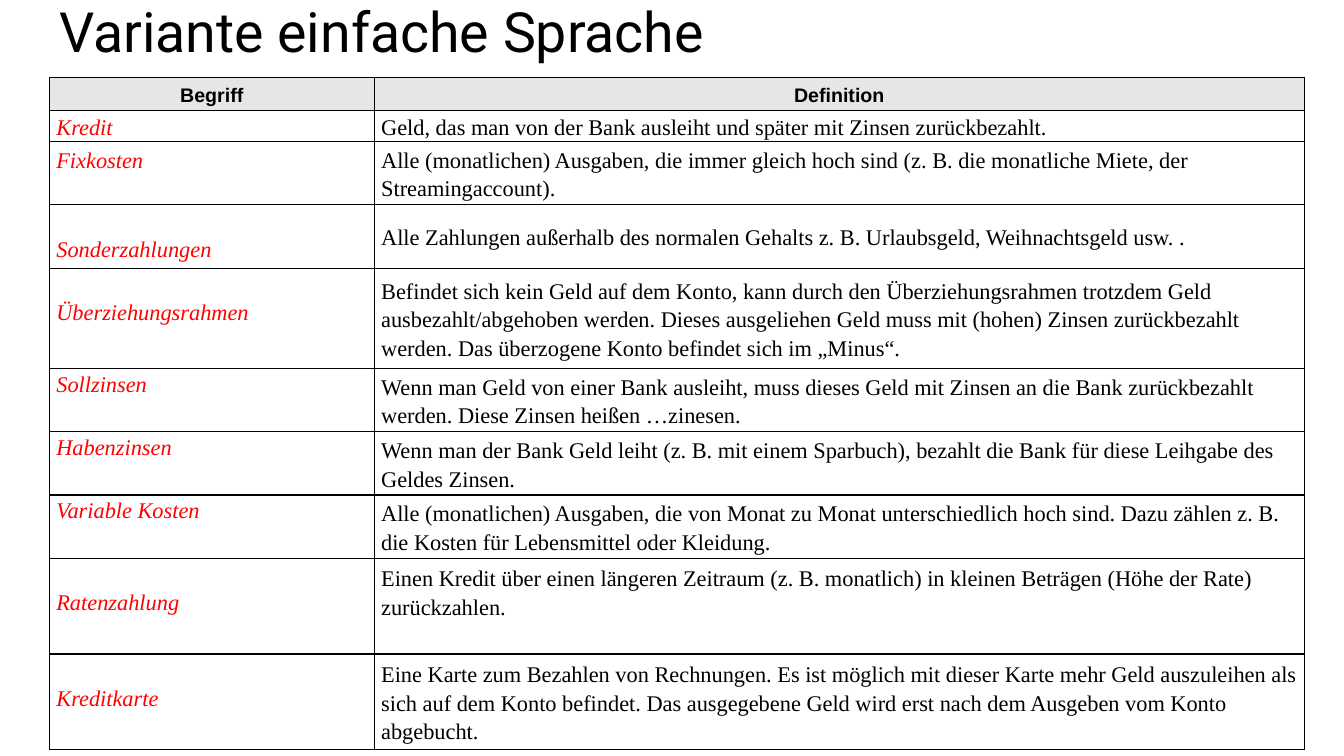
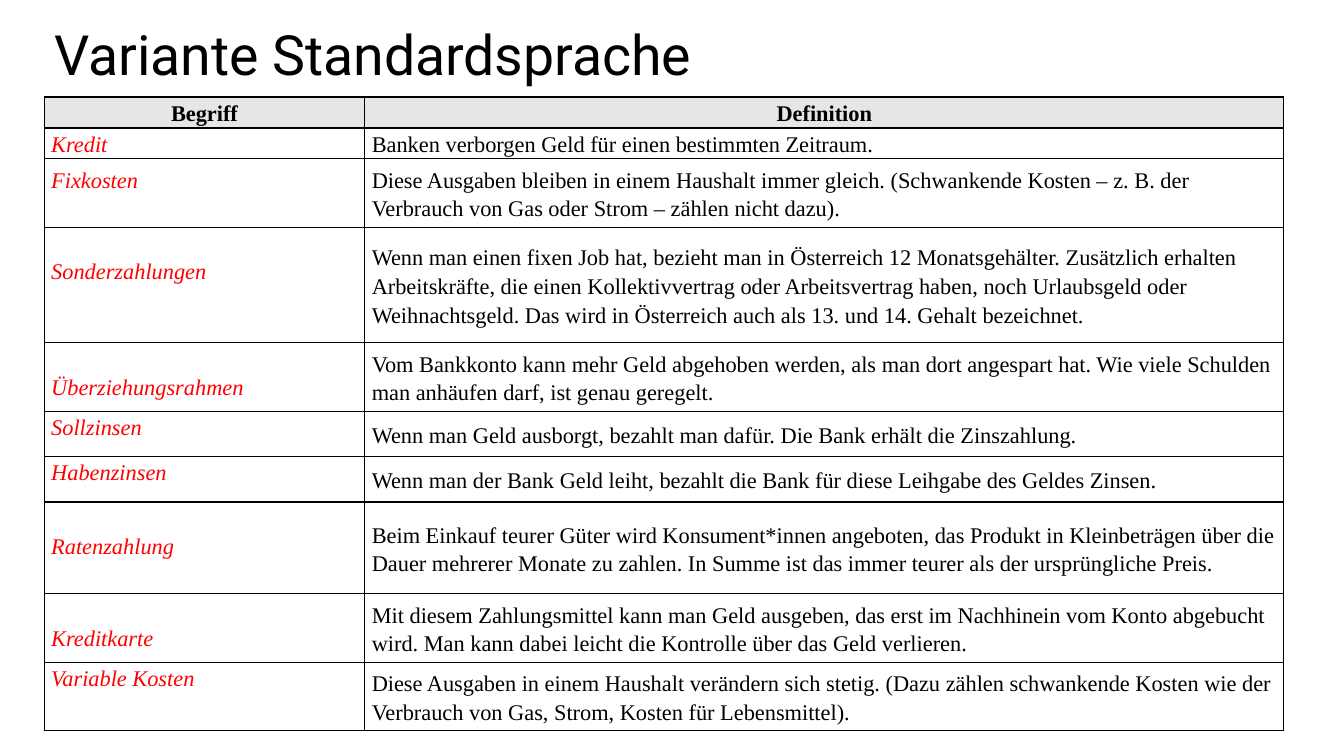
"""Build two vocabulary slides about money terms, each a title above a two-column table."""
from lxml import etree
from pptx import Presentation
from pptx.dml.color import RGBColor
from pptx.enum.text import MSO_ANCHOR, PP_ALIGN
from pptx.oxml.ns import qn
from pptx.util import Pt

MIDDLE, TOP = MSO_ANCHOR.MIDDLE, MSO_ANCHOR.TOP
LEFT, CENTER = PP_ALIGN.LEFT, PP_ALIGN.CENTER

THEME = {
    "black": RGBColor(0, 0, 0),
    "red": RGBColor(255, 0, 0),
    "white": RGBColor(255, 255, 255),
    "gray": RGBColor(0xE7, 0xE6, 0xE6),
    "title_font": "Roboto",
    "body_font": "Times New Roman",
    "title_size": 39.6,
    "body_size": 16,
    "border": 1,
}
LINE = 20.5
SIDE = 5
CENTERED_TERMS = {"Kredit", "Fixkosten"}
LOWERED_TERMS = {"Sonderzahlungen", "Überziehungsrahmen", "Ratenzahlung", "Kreditkarte"}

SLIDES = [
    {
        "title": "Variante einfache Sprache",
        "title_at": (35.3, 5),
        "table_at": (35.3, 55.5),
        "columns": (232, 664.5),
        "header": (23.6, "Arial", 14),
        "rows": [
            (21.4, "Kredit", "Geld, das man von der Bank ausleiht und später mit Zinsen zurückbezahlt."),
            (45.2, "Fixkosten", "Alle (monatlichen) Ausgaben, die immer gleich hoch sind (z. B. die monatliche "
             "Miete, der Streamingaccount)."),
            (45.2, "Sonderzahlungen", "Alle Zahlungen außerhalb des normalen Gehalts z. B. Urlaubsgeld, "
             "Weihnachtsgeld usw. ."),
            (71.7, "Überziehungsrahmen", "Befindet sich kein Geld auf dem Konto, kann durch den "
             "Überziehungsrahmen trotzdem Geld ausbezahlt/abgehoben werden. Dieses ausgeliehen Geld muss mit "
             "(hohen) Zinsen zurückbezahlt werden. Das überzogene Konto befindet sich im „Minus“."),
            (45.2, "Sollzinsen", "Wenn man Geld von einer Bank ausleiht, muss dieses Geld mit Zinsen an die "
             "Bank zurückbezahlt werden. Diese Zinsen heißen …zinesen."),
            (45.2, "Habenzinsen", "Wenn man der Bank Geld leiht (z. B. mit einem Sparbuch), bezahlt die Bank "
             "für diese Leihgabe des Geldes Zinsen."),
            (45.2, "Variable Kosten", "Alle (monatlichen) Ausgaben, die von Monat zu Monat unterschiedlich "
             "hoch sind. Dazu zählen z. B. die Kosten für Lebensmittel oder Kleidung."),
            (68.4, "Ratenzahlung", "Einen Kredit über einen längeren Zeitraum (z. B. monatlich) in kleinen "
             "Beträgen (Höhe der Rate) zurückzahlen.", LINE),
            (68.4, "Kreditkarte", "Eine Karte zum Bezahlen von Rechnungen. Es ist möglich mit dieser Karte "
             "mehr Geld auszuleihen als sich auf dem Konto befindet. Das ausgegebene Geld wird erst nach dem "
             "Ausgeben vom Konto abgebucht."),
        ],
    },
    {
        "title": "Variante Standardsprache",
        "title_at": (31.6, 21.4),
        "table_at": (31.6, 69.3),
        "columns": (229, 656.5),
        "header": (20.5, THEME["body_font"], THEME["body_size"]),
        "rows": [
            (20.5, "Kredit", "Banken verborgen Geld für einen bestimmten Zeitraum."),
            (49, "Fixkosten", "Diese Ausgaben bleiben in einem Haushalt immer gleich. (Schwankende Kosten – "
             "z. B. der Verbrauch von Gas oder Strom – zählen nicht dazu)."),
            (82.4, "Sonderzahlungen", "Wenn man einen fixen Job hat, bezieht man in Österreich 12 "
             "Monatsgehälter. Zusätzlich erhalten Arbeitskräfte, die einen Kollektivvertrag oder "
             "Arbeitsvertrag haben, noch Urlaubsgeld oder Weihnachtsgeld. Das wird in Österreich auch als "
             "13. und 14. Gehalt bezeichnet."),
            (49, "Überziehungsrahmen", "Vom Bankkonto kann mehr Geld abgehoben werden, als man dort angespart "
             "hat. Wie viele Schulden man anhäufen darf, ist genau geregelt."),
            (32.4, "Sollzinsen", "Wenn man Geld ausborgt, bezahlt man dafür. Die Bank erhält die Zinszahlung."),
            (32.4, "Habenzinsen", "Wenn man der Bank Geld leiht, bezahlt die Bank für diese Leihgabe des "
             "Geldes Zinsen."),
            (65.5, "Ratenzahlung", "Beim Einkauf teurer Güter wird Konsument*innen angeboten, das Produkt in "
             "Kleinbeträgen über die Dauer mehrerer Monate zu zahlen. In Summe ist das immer teurer als der "
             "ursprüngliche Preis."),
            (49, "Kreditkarte", "Mit diesem Zahlungsmittel kann man Geld ausgeben, das erst im Nachhinein vom "
             "Konto abgebucht wird. Man kann dabei leicht die Kontrolle über das Geld verlieren."),
            (49, "Variable Kosten", "Diese Ausgaben in einem Haushalt verändern sich stetig. (Dazu zählen "
             "schwankende Kosten wie der Verbrauch von Gas, Strom, Kosten für Lebensmittel)."),
        ],
    },
]


def write(p, text, font, size, color, spacing, align=LEFT, bold=False, italic=False):
    p.text = text
    p.alignment = align
    p.line_spacing = spacing
    f = p.runs[0].font
    f.name, f.size, f.bold, f.italic = font, Pt(size), bold, italic
    f.color.rgb = color


def prepare_cell(cell, fill, anchor=MIDDLE, top=0, bottom=0):
    cell.margin_left = cell.margin_right = Pt(SIDE)
    cell.margin_top, cell.margin_bottom = Pt(top), Pt(bottom)
    cell.vertical_anchor = anchor
    tc_pr = cell._tc.get_or_add_tcPr()
    for side in ("a:lnL", "a:lnR", "a:lnT", "a:lnB"):
        ln = etree.SubElement(tc_pr, qn(side), w=str(Pt(THEME["border"])))
        solid = etree.SubElement(ln, qn("a:solidFill"))
        etree.SubElement(solid, qn("a:srgbClr"), val=str(THEME["black"]))
    cell.fill.solid()
    cell.fill.fore_color.rgb = fill
    return cell.text_frame.paragraphs[0]


prs = Presentation()
prs.slide_width, prs.slide_height = Pt(960), Pt(540)

for data in SLIDES:
    s = prs.slides.add_slide(prs.slide_layouts[6])

    left, top = data["title_at"]
    tf = s.shapes.add_textbox(Pt(left), Pt(top), Pt(828), Pt(39)).text_frame
    tf.word_wrap = True
    tf.vertical_anchor = MIDDLE
    write(tf.paragraphs[0], data["title"], THEME["title_font"], THEME["title_size"], THEME["black"], 0.9)

    left, top = data["table_at"]
    header_height, header_font, header_size = data["header"]
    heights = [header_height] + [row[0] for row in data["rows"]]
    table = s.shapes.add_table(len(heights), 2, Pt(left), Pt(top),
                               Pt(sum(data["columns"])), Pt(sum(heights))).table
    table.horz_banding = False
    for column, width in zip(table.columns, data["columns"]):
        column.width = Pt(width)
    for row, height in zip(table.rows, heights):
        row.height = Pt(height)

    for col, heading in enumerate(("Begriff", "Definition")):
        p = prepare_cell(table.cell(0, col), THEME["gray"])
        write(p, heading, header_font, header_size, THEME["black"], 1.15, CENTER, bold=True)

    for i, (height, term, definition, *gap) in enumerate(data["rows"], 1):
        p = prepare_cell(table.cell(i, 0), THEME["white"],
                         anchor=MIDDLE if term in CENTERED_TERMS else TOP,
                         top=LINE if term in LOWERED_TERMS else 0,
                         bottom=LINE if term == "Fixkosten" else 0)
        write(p, term, THEME["body_font"], THEME["body_size"], THEME["red"], 1.15, italic=True)
        p = prepare_cell(table.cell(i, 1), THEME["white"], bottom=sum(gap))
        write(p, definition, THEME["body_font"], THEME["body_size"], THEME["black"], 1.15)

prs.save("out.pptx")
